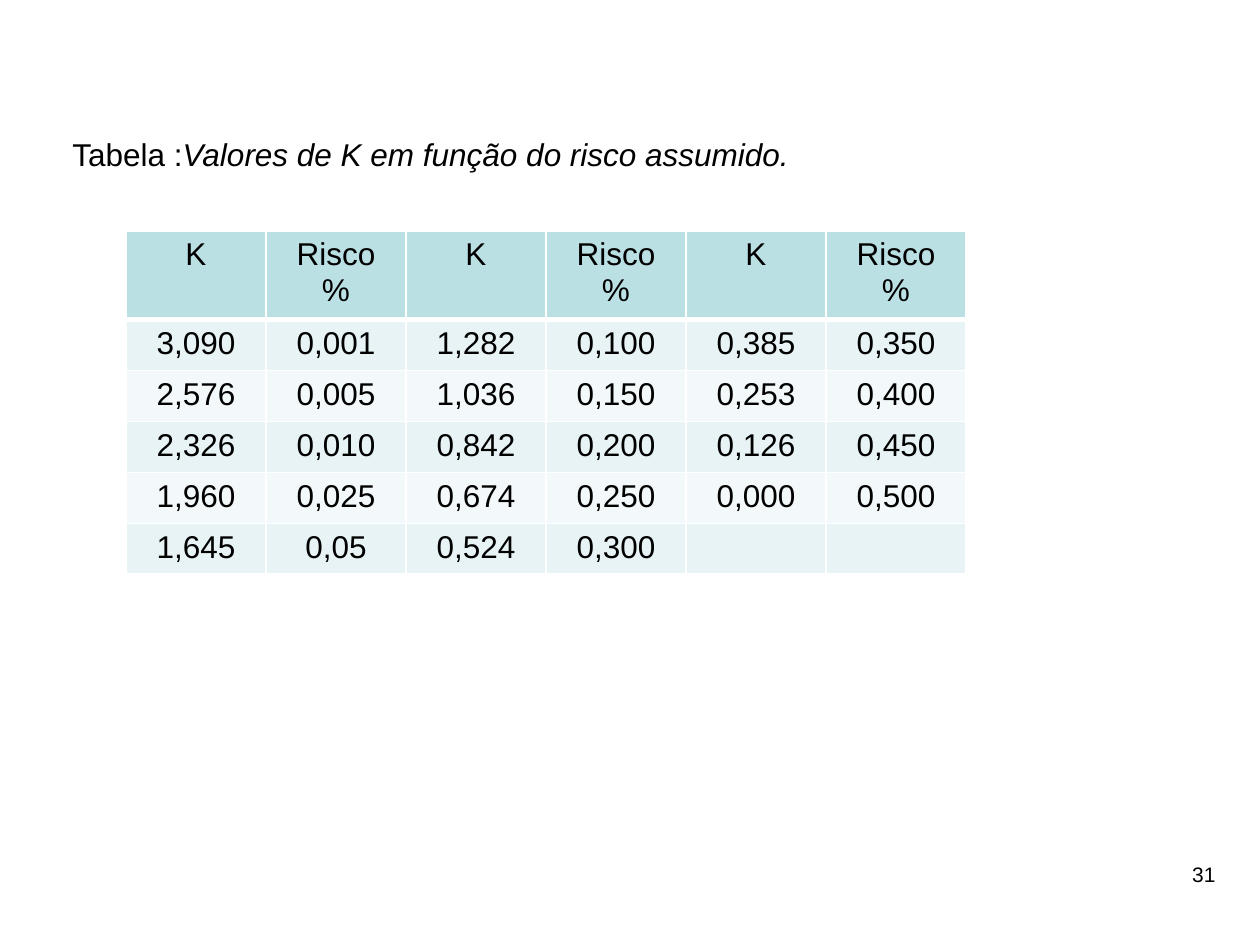
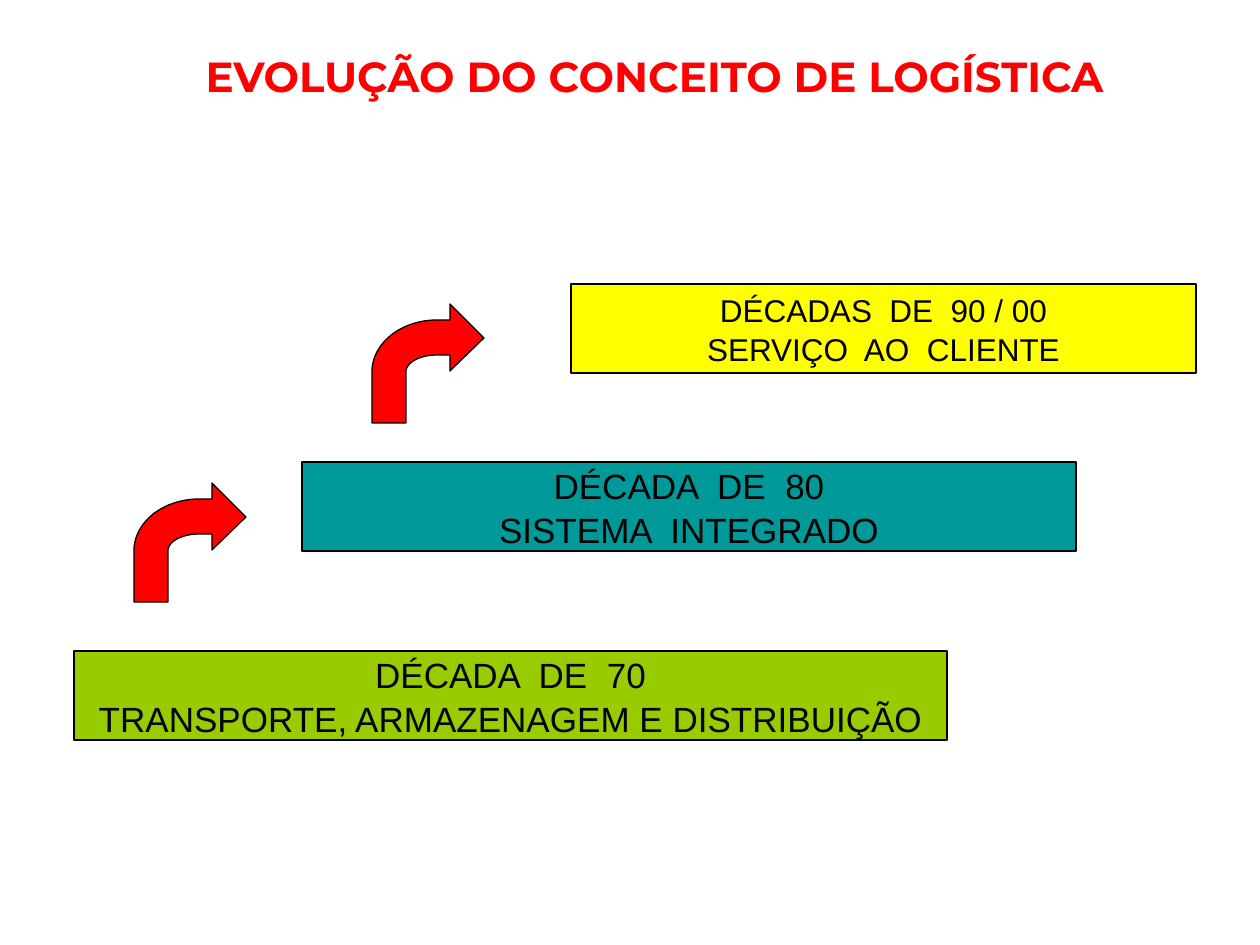
import math

import pptx
import pptx.dml.color
import pptx.enum.shapes
import pptx.enum.text
import pptx.oxml
import pptx.oxml.ns
import pptx.util

PX_PER_INCH = 126
COLORS = {
    "text": "000000", "line": "000000", "grid": "FFFFFF", "accent": "FF0000",
    "header": "BBE0E3", "odd": "E7F3F4", "even": "F3F9FA",
    "service": "FFFF00", "system": "009999", "transport": "99CC00",
}
BODY_FONT, TITLE_FONT = "Arial", "Montserrat"
ALIGN = pptx.enum.text.PP_ALIGN
ANCHOR = pptx.enum.text.MSO_ANCHOR

HEADINGS = ["K", "Risco %"] * 3
RISK_ROWS = [
    ["3,090", "0,001", "1,282", "0,100", "0,385", "0,350"],
    ["2,576", "0,005", "1,036", "0,150", "0,253", "0,400"],
    ["2,326", "0,010", "0,842", "0,200", "0,126", "0,450"],
    ["1,960", "0,025", "0,674", "0,250", "0,000", "0,500"],
    ["1,645", "0,05", "0,524", "0,300", "", ""],
]
DECADES = [
    ((571, 284, 625, 89), "service", 18, "DÉCADAS  DE  90 / 00\nSERVIÇO  AO  CLIENTE"),
    ((302, 462, 774, 89), "system", 20, "DÉCADA  DE  80\nSISTEMA  INTEGRADO"),
    ((74, 651, 873, 89), "transport", 20,
     "DÉCADA  DE  70\nTRANSPORTE, ARMAZENAGEM E DISTRIBUIÇÃO"),
]
RISING_ARROWS = [(372, 304), (134, 483)]


def px(length):
    return pptx.util.Emu(round(length * 914400 / PX_PER_INCH))


def rgb(name):
    return pptx.dml.color.RGBColor.from_string(COLORS[name])


def style_text(frame, size, align=ALIGN.LEFT, color="text", font=BODY_FONT, bold=False):
    for paragraph in frame.paragraphs:
        paragraph.alignment = align
        for run in paragraph.runs:
            run.font.size = pptx.util.Pt(size)
            run.font.name = font
            run.font.bold = bold
            run.font.color.rgb = rgb(color)


def add_text(slide, box, text, size, anchor=ANCHOR.TOP, **style):
    frame = slide.shapes.add_textbox(*map(px, box)).text_frame
    frame.word_wrap = True
    frame.vertical_anchor = anchor
    frame.text = text
    style_text(frame, size, **style)
    return frame


def paint(shape, color):
    shape.shadow.inherit = False
    shape.fill.solid()
    shape.fill.fore_color.rgb = rgb(color)
    shape.line.color.rgb = rgb("line")
    shape.line.width = pptx.util.Pt(0.75)


def set_borders(cell, top, bottom):
    properties = cell._tc.get_or_add_tcPr()
    for side, points in (("L", 1), ("R", 1), ("T", top), ("B", bottom)):
        properties.append(pptx.oxml.parse_xml(
            f'<a:ln{side} {pptx.oxml.ns.nsdecls("a")} w="{pptx.util.Pt(points)}">'
            f'<a:solidFill><a:srgbClr val="{COLORS["grid"]}"/></a:solidFill></a:ln{side}>'))


def add_risk_table(slide, box, header_height):
    left, top, width, height = box
    rows = [HEADINGS] + RISK_ROWS
    table = slide.shapes.add_table(len(rows), len(HEADINGS), *map(px, box)).table
    for column in table.columns:
        column.width = px(width / len(HEADINGS))
    for index, values in enumerate(rows):
        is_header = index == 0
        table.rows[index].height = px(
            header_height if is_header else (height - header_height) / len(RISK_ROWS))
        fill = "header" if is_header else "odd" if index % 2 else "even"
        for cell, value in zip(table.rows[index].cells, values):
            cell.text = value
            style_text(cell.text_frame, 18, ALIGN.CENTER)
            set_borders(cell, 3 if index == 1 else 1, 3 if is_header else 1)
            cell.fill.solid()
            cell.fill.fore_color.rgb = rgb(fill)


def add_decade(slide, box, color, size, text):
    step = slide.shapes.add_shape(
        pptx.enum.shapes.MSO_SHAPE.RECTANGLE, *map(px, box))
    paint(step, color)
    frame = step.text_frame
    frame.word_wrap = False
    frame.vertical_anchor = ANCHOR.MIDDLE
    frame.text = text
    style_text(frame, size, ALIGN.CENTER)
    for paragraph in frame.paragraphs:
        paragraph.line_spacing = 1.05


def bend(radius_x, radius_y, steps=24):
    """Quarter ellipse from its top to its left end, around the arrow's elbow."""
    angles = [math.pi / 2 * step / steps for step in range(steps + 1)]
    return [(65 - radius_x * math.sin(a), 68 - radius_y * math.cos(a)) for a in angles]


def add_rising_arrow(slide, left, top):
    outline = [(112, 34), (78, 0), (78, 16), *bend(65, 52), (0, 119), (34, 119),
               *reversed(bend(31, 17)), (78, 51), (78, 67)]
    points = [(px(left + x), px(top + y)) for x, y in outline]
    builder = slide.shapes.build_freeform(*points[0])
    builder.add_line_segments(points[1:], close=True)
    paint(builder.convert_to_shape(), "accent")


def build_risk_slide(slide):
    add_text(slide, (1168, 843, 60, 50), "31", 12, ANCHOR.BOTTOM, align=ALIGN.RIGHT)
    caption = add_text(slide, (60, 129, 1157, 89), "Tabela :", 18)
    values = caption.paragraphs[0].add_run()
    values.text = "Valores de K em função do risco assumido."
    style_text(caption, 18)
    values.font.italic = True
    add_risk_table(slide, (126, 231, 840, 343), 88)


def build_evolution_slide(slide):
    add_text(slide, (166, 44, 977, 229), "EVOLUÇÃO DO CONCEITO DE LOGÍSTICA", 24,
             align=ALIGN.CENTER, color="accent", font=TITLE_FONT, bold=True)
    for decade in DECADES:
        add_decade(slide, *decade)
    for corner in RISING_ARROWS:
        add_rising_arrow(slide, *corner)


def main():
    deck = pptx.Presentation()
    deck.slide_width, deck.slide_height = px(1260), px(945)
    for build in (build_risk_slide, build_evolution_slide):
        build(deck.slides.add_slide(deck.slide_layouts[6]))
    deck.save("out.pptx")


if __name__ == "__main__":
    main()
